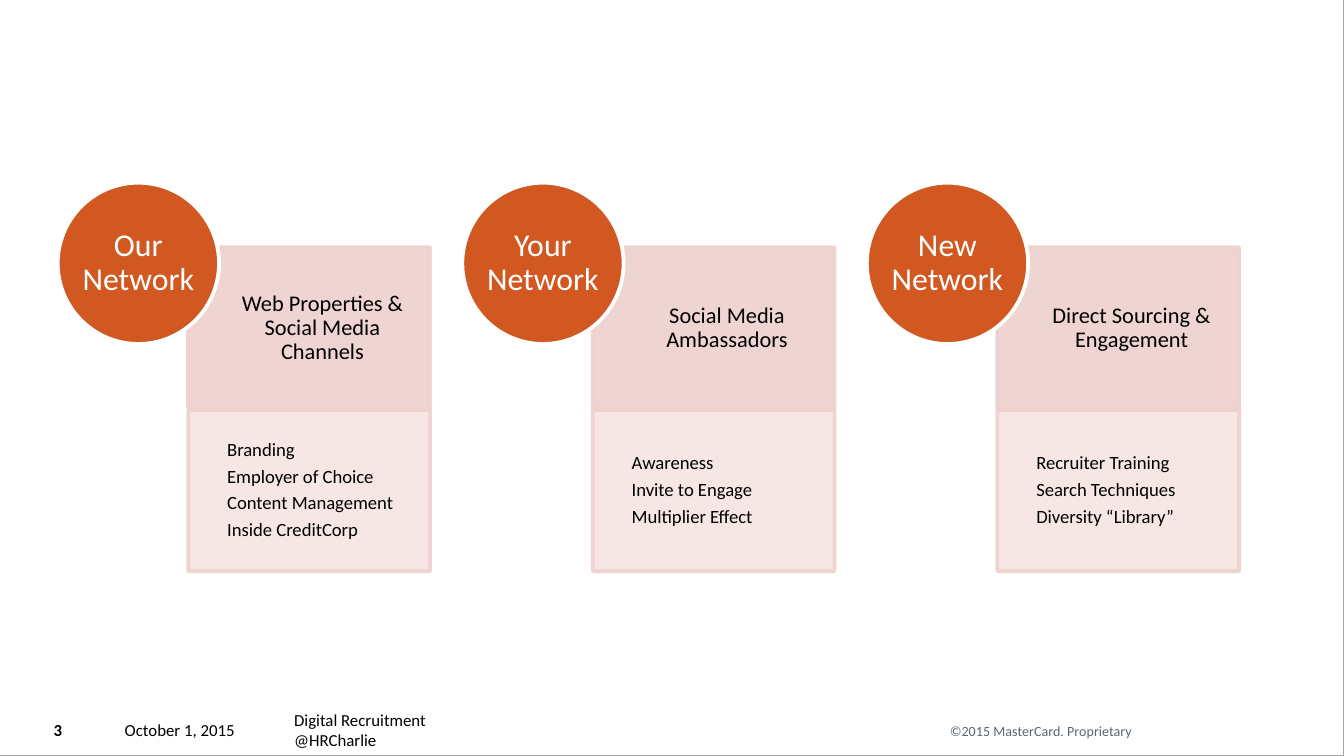
from dataclasses import dataclass

from lxml.etree import SubElement
from pptx import Presentation
from pptx.dml.color import RGBColor
from pptx.enum.shapes import MSO_SHAPE
from pptx.enum.text import MSO_ANCHOR, MSO_AUTO_SIZE, PP_ALIGN
from pptx.oxml.ns import qn
from pptx.util import Inches, Pt

COLORS = {
    "orange": "D15821",
    "rose": "EED1CD",
    "white": "FFFFFF",
    "black": "000000",
    "slate": "5B6770",
    "frame": "A6A6A6",
}
FONT = "Calibri"
SLIDE_W = 10
SLIDE_H = SLIDE_W * 9 / 16
LEFT, PITCH = 0.43, 3.01
CARD_DX, CARD_W, CARD_H = 0.97, 1.8, 1.2
HEAD_TOP, LIST_TOP = 1.84, 3.05
CIRCLE_TOP, CIRCLE_SIZE = 1.36, 1.2
TEXT_INDENT = 0.29


@dataclass
class Network:
    name: str
    heading: str
    items: list[str]


@dataclass
class Footer:
    text: str
    left: float
    top: float
    width: float
    size: float = 9
    color: str = "black"
    bold: bool = False
    align: PP_ALIGN = PP_ALIGN.LEFT


NETWORKS = [
    Network("Our Network", "Web Properties & Social Media Channels",
            ["Branding", "Employer of Choice", "Content Management", "Inside CreditCorp"]),
    Network("Your Network", "Social Media Ambassadors",
            ["Awareness", "Invite to Engage", "Multiplier Effect"]),
    Network("New Network", "Direct Sourcing & Engagement",
            ["Recruiter Training", "Search Techniques", "Diversity “Library”"]),
]

FOOTERS = [
    Footer("©2015 MasterCard. Proprietary", 6.03, 5.37, 2.49, 7.5, "slate",
           align=PP_ALIGN.RIGHT),
    Footer("October 1, 2015", 0.83, 5.36, 1.17),
    Footer("Digital Recruitment\v@HRCharlie", 2.09, 5.36, 3.8),
    Footer("3", 0.3, 5.36, 0.38, bold=True),
]


def rgb(name: str) -> RGBColor:
    return RGBColor.from_string(COLORS[name])


def set_alpha(fill_parent, percent: int) -> None:
    color = fill_parent.find(qn("a:solidFill"))[0]
    SubElement(color, qn("a:alpha")).set("val", str(percent * 1000))


def paint(sp, fill: str, line: str, fill_alpha: int = 100, line_alpha: int = 100) -> None:
    sp.fill.solid()
    sp.fill.fore_color.rgb = rgb(fill)
    sp.line.color.rgb = rgb(line)
    sp.line.width = Pt(2)
    if fill_alpha < 100:
        set_alpha(sp.element.spPr, fill_alpha)
    if line_alpha < 100:
        set_alpha(sp.element.spPr.find(qn("a:ln")), line_alpha)


def write(sp, lines: list[str], size: float, color: str, insets: tuple,
          align: PP_ALIGN = PP_ALIGN.LEFT, spacing: float = 0.9,
          after: float = 0.35, bold: bool = False) -> None:
    tf = sp.text_frame
    tf.auto_size = MSO_AUTO_SIZE.NONE
    tf.word_wrap = True
    tf.vertical_anchor = MSO_ANCHOR.MIDDLE
    tf.margin_left, tf.margin_top, tf.margin_right, tf.margin_bottom = map(Inches, insets)
    tf.text = "\n".join(lines)
    for p in tf.paragraphs:
        if sp.is_placeholder:
            pPr = p._p.get_or_add_pPr()
            pPr.set("marL", "0")
            pPr.set("indent", "0")
            SubElement(pPr, qn("a:buNone"))
        p.alignment = align
        p.line_spacing = spacing
        p.space_before = Pt(0)
        p.space_after = Pt(size * after)
        for r in p.runs:
            r.font.name = FONT
            r.font.size = Pt(size)
            r.font.bold = bold
            r.font.color.rgb = rgb(color)


def add_shape(slide, kind: MSO_SHAPE, left: float, top: float, width: float, height: float):
    sp = slide.shapes.add_shape(kind, *map(Inches, (left, top, width, height)))
    sp.shadow.inherit = False
    return sp


def draw_network(slide, network: Network, body, left: float) -> None:
    card_left = left + CARD_DX
    head = add_shape(slide, MSO_SHAPE.RECTANGLE, card_left, HEAD_TOP, CARD_W, CARD_H)
    paint(head, "rose", "rose", 90, 90)
    write(head, [network.heading], 12, "black", (TEXT_INDENT, 0.09, 0.09, 0.09),
          PP_ALIGN.CENTER)

    body.left, body.top = Inches(card_left), Inches(LIST_TOP)
    body.width, body.height = Inches(CARD_W), Inches(CARD_H)
    paint(body, "rose", "rose", 50, 90)
    write(body, network.items, 10, "black", (TEXT_INDENT, 0.08, 0.08, 0.08))

    circle = add_shape(slide, MSO_SHAPE.OVAL, left, CIRCLE_TOP, CIRCLE_SIZE, CIRCLE_SIZE)
    paint(circle, "orange", "white")
    write(circle, [network.name], 17, "white", (0, 0, 0, 0), PP_ALIGN.CENTER)


def draw_footer(slide, footer: Footer) -> None:
    box = slide.shapes.add_textbox(Inches(footer.left), Inches(footer.top),
                                   Inches(footer.width), Inches(0.14))
    write(box, [footer.text], footer.size, footer.color, (0.1, 0, 0.1, 0),
          footer.align, 1.0, 0, footer.bold)


def main() -> None:
    prs = Presentation()
    prs.slide_width, prs.slide_height = Inches(SLIDE_W), Inches(SLIDE_H)
    slide = prs.slides.add_slide(prs.slide_layouts[4])
    title, *bodies = list(slide.placeholders)
    for unused in (title, *bodies[len(NETWORKS):]):
        unused.element.getparent().remove(unused.element)

    frame = add_shape(slide, MSO_SHAPE.RECTANGLE, 0, 0, SLIDE_W, SLIDE_H)
    frame.fill.background()
    frame.line.color.rgb = rgb("frame")
    frame.line.width = Pt(0.5)

    for i, (network, body) in enumerate(zip(NETWORKS, bodies)):
        draw_network(slide, network, body, LEFT + i * PITCH)
    for footer in FOOTERS:
        draw_footer(slide, footer)
    prs.save("out.pptx")


if __name__ == "__main__":
    main()
